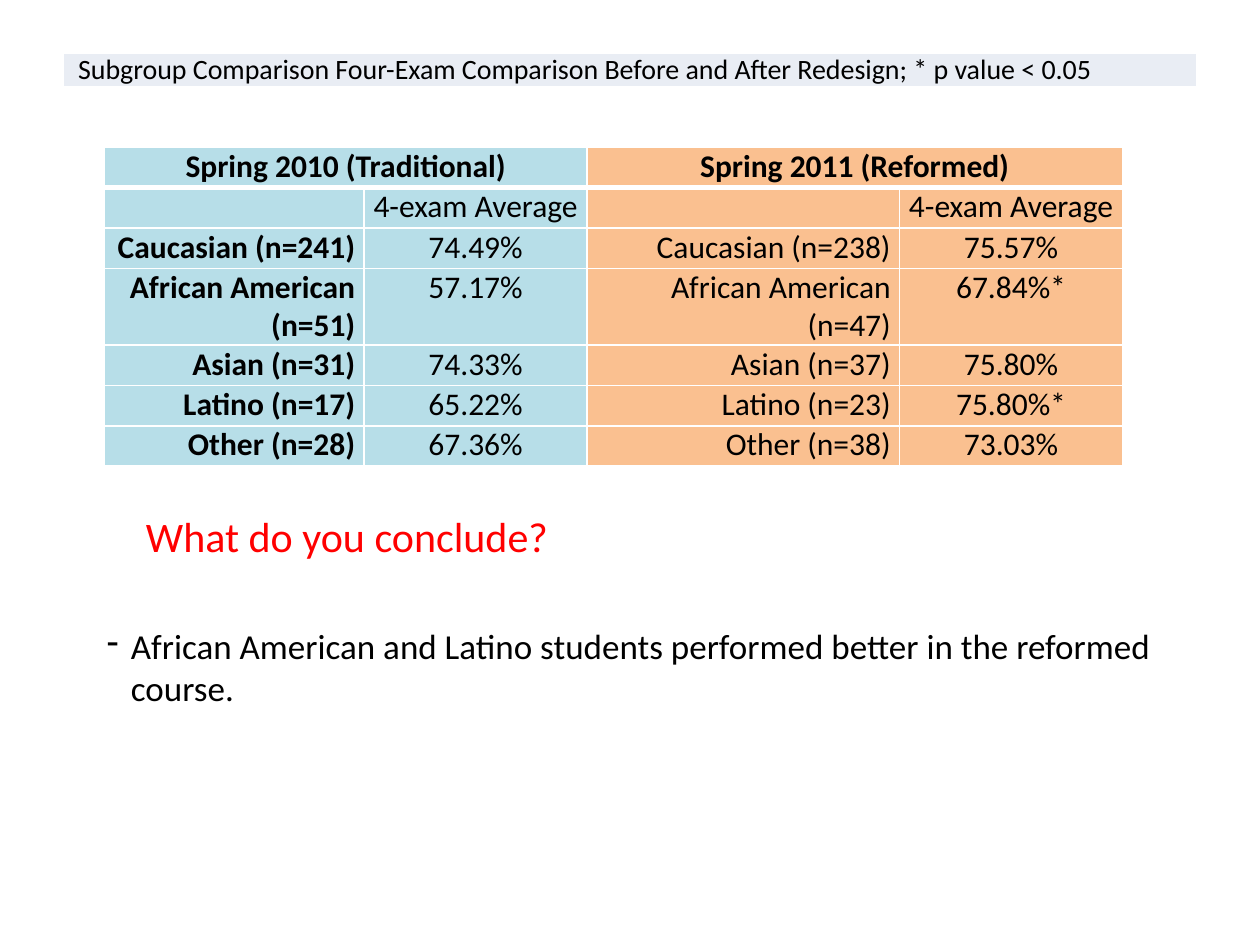
from lxml.etree import SubElement
from pptx import Presentation
from pptx.dml.color import RGBColor as Rgb
from pptx.enum.text import MSO_AUTO_SIZE as AutoSize, PP_ALIGN as Align
from pptx.oxml.ns import qn
from pptx.util import Inches, Pt

COLORS = {"text": "000000", "question": "FF0000", "border": "FFFFFF",
          "before": "B7DEE8", "after": "FAC090", "banner": "E9EDF4"}

# Group, count before, average before, count after, average after
SUBGROUPS = [
    ("Caucasian", 241, "74.49%", 238, "75.57%"),
    ("African American", 51, "57.17%", 47, "67.84%*"),
    ("Asian", 31, "74.33%", 37, "75.80%"),
    ("Latino", 17, "65.22%", 23, "75.80%*"),
    ("Other", 28, "67.36%", 38, "73.03%"),
]


def write(frame, text, size=18, color="text", bold=False, align=Align.LEFT,
          space=None, bullet=None, indent=0.19):
    """Put one formatted paragraph into a text frame."""
    paragraph = frame.paragraphs[0]
    paragraph.alignment = align
    if space is not None:
        paragraph.space_before = paragraph.space_after = Pt(space)
    if bullet:
        props = paragraph._p.get_or_add_pPr()
        props.set("marL", str(Inches(indent)))
        props.set("indent", str(-Inches(indent)))
        SubElement(props, qn("a:buChar"), char=bullet)
    run = paragraph.add_run()
    run.text = text
    run.font.name = "Calibri"
    run.font.size = Pt(size)
    run.font.bold = bold
    run.font.color.rgb = Rgb.from_string(COLORS[color])


class SlideBuilder:
    def __init__(self, slide):
        self.slide = slide

    def table(self, left, top, widths, heights):
        size = Inches(sum(widths)), Inches(sum(heights))
        grid = self.slide.shapes.add_table(
            len(heights), len(widths), Inches(left), Inches(top), *size).table
        grid.first_row = grid.horz_banding = False
        for column, width in zip(grid.columns, widths):
            column.width = Inches(width)
        for row, height in zip(grid.rows, heights):
            row.height = Inches(height)
        return grid

    def cell(self, cell, fill, margin=0.07, top=1, bottom=1):
        """Set margins, white borders (points) and fill of a cell."""
        cell.margin_left = cell.margin_right = Inches(margin)
        cell.margin_top = cell.margin_bottom = 0
        props = cell._tc.get_or_add_tcPr()
        for side, width in zip("LRTB", (1, 1, top, bottom)):
            line = SubElement(props, qn(f"a:ln{side}"), w=str(Pt(width)))
            solid = SubElement(line, qn("a:solidFill"))
            SubElement(solid, qn("a:srgbClr"), val=COLORS["border"])
        cell.fill.solid()
        cell.fill.fore_color.rgb = Rgb.from_string(COLORS[fill])

    def text(self, left, top, width, height, text, **style):
        frame = self.slide.shapes.add_textbox(
            Inches(left), Inches(top), Inches(width), Inches(height)).text_frame
        frame.word_wrap = True
        frame.auto_size = AutoSize.SHAPE_TO_FIT_TEXT
        write(frame, text, **style)


def main():
    deck = Presentation()
    deck.slide_width, deck.slide_height = Inches(10), Inches(7.5)
    builder = SlideBuilder(deck.slides.add_slide(deck.slide_layouts[6]))

    # Comparison table
    heights = [0.32] * (len(SUBGROUPS) + 2)
    heights[3] = 0.6
    scores = builder.table(0.83, 1.17, [2.06, 1.77, 2.48, 1.77], heights)
    for row in range(len(heights)):
        for col in range(4):
            builder.cell(scores.cell(row, col), "before" if col < 2 else "after",
                         top=3 if row == 1 else 1, bottom=3 if row == 0 else 1)

    # Column headings
    for col, term in ((0, "Spring 2010 (Traditional)"), (2, "Spring 2011 (Reformed)")):
        heading = scores.cell(0, col)
        heading.merge(scores.cell(0, col + 1))
        write(heading.text_frame, term, bold=True, align=Align.CENTER)
        write(scores.cell(1, col + 1).text_frame, "4-exam Average", align=Align.CENTER)

    # Subgroup rows
    for row, (group, *results) in enumerate(SUBGROUPS, start=2):
        for col in (0, 2):
            count, average = results[col:col + 2]
            write(scores.cell(row, col).text_frame, f"{group} (n={count})",
                  bold=col == 0, align=Align.RIGHT)
            write(scores.cell(row, col + 1).text_frame, average, align=Align.CENTER)

    # Banner
    banner = builder.table(0.5, 0.42, [9], [0.25]).cell(0, 0)
    builder.cell(banner, "banner", margin=0.12)
    write(banner.text_frame,
          "Subgroup Comparison Four-Exam Comparison Before and After Redesign; "
          "* p value < 0.05", size=16, space=6)

    # Conclusion and question
    builder.text(0.75, 4.91, 8.75, 0.77,
                 "African American and Latino students performed better in the "
                 "reformed course.", size=20, bullet="-")
    builder.text(1.06, 4, 7.75, 0.5, "What do you conclude?", size=24, color="question")

    deck.save("out.pptx")


if __name__ == "__main__":
    main()
